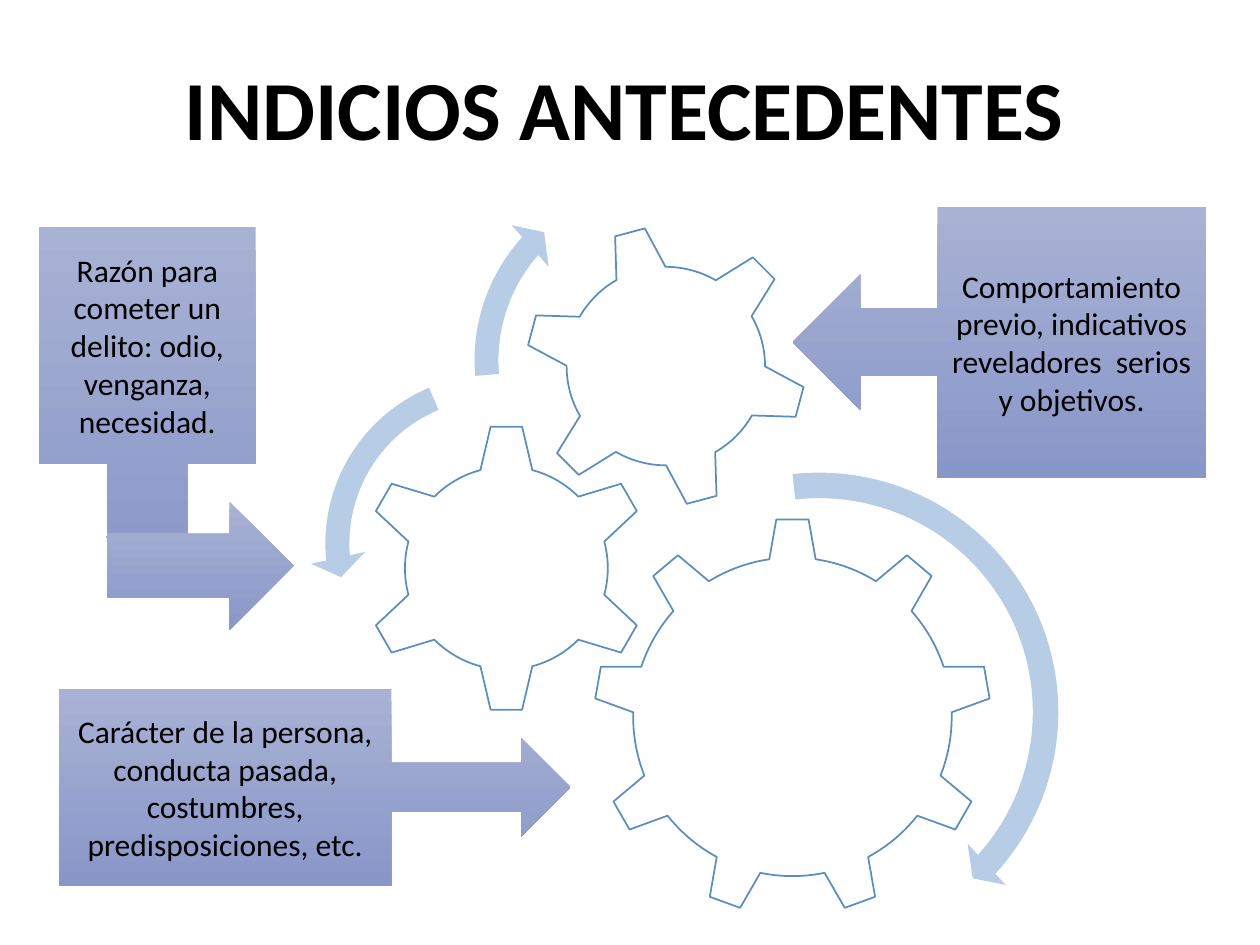
from dataclasses import dataclass

from pptx import Presentation
from pptx.dml.color import RGBColor
from pptx.enum.shapes import MSO_SHAPE
from pptx.enum.text import MSO_ANCHOR, PP_ALIGN
from pptx.util import Pt

GEAR_6, GEAR_9 = MSO_SHAPE.GEAR_6, MSO_SHAPE.GEAR_9
TURN_RIGHT, TURN_LEFT = MSO_SHAPE.CIRCULAR_ARROW, MSO_SHAPE.LEFT_CIRCULAR_ARROW
CALL_LEFT, CALL_RIGHT = MSO_SHAPE.LEFT_ARROW_CALLOUT, MSO_SHAPE.RIGHT_ARROW_CALLOUT
CALL_DOWN, ARROW = MSO_SHAPE.DOWN_ARROW_CALLOUT, MSO_SHAPE.RIGHT_ARROW
CENTER, MIDDLE = PP_ALIGN.CENTER, MSO_ANCHOR.MIDDLE


@dataclass(frozen=True)
class Theme:
    font: str = "Calibri"
    title_size: int = 48
    body_size: int = 18
    text: str = "000000"
    gear_fill: str = "FFFFFF"
    gear_line: str = "598EBE"
    turn: str = "B7CCE5"
    grad_top: str = "A8B2D4"
    grad_bottom: str = "8996C8"


THEME = Theme()


def rgb(value):
    return RGBColor.from_string(value)


def add_shape(shapes, kind, box, adj=()):
    sp = shapes.add_shape(kind, *(Pt(v) for v in box))
    sp.shadow.inherit = False
    sp.line.fill.background()
    for i, value in enumerate(adj):
        sp.adjustments[i] = value
    return sp


def set_solid(sp, color):
    sp.fill.solid()
    sp.fill.fore_color.rgb = rgb(color)


def set_text(sp, text, size, bold=False):
    tf = sp.text_frame
    tf.vertical_anchor = MIDDLE
    p = tf.paragraphs[0]
    p.text = text
    p.alignment = CENTER
    p.font.name = THEME.font
    p.font.size = Pt(size)
    p.font.bold = bold
    p.font.color.rgb = rgb(THEME.text)


def add_title(slide, box, text):
    sp = slide.shapes.add_textbox(*(Pt(v) for v in box))
    sp.text_frame.word_wrap = False
    set_text(sp, text, THEME.title_size, bold=True)


def add_gears(slide, left, top):
    """Three gears and their turning arrows, placed from the top left corner."""
    gears = [
        (GEAR_9, 162.1, 203.7, 227.5, 0),
        (GEAR_6, 29.6, 149.7, 165.6, 0),
        (GEAR_6, 122.5, 36, 162, -15),
    ]
    turns = [
        (TURN_RIGHT, 145.6, 169.2, 290.9, (0.05, 2.99, 25.37, 158.18, 0.055)),
        (TURN_LEFT, 0, 113, 211, (0.065, 4.3, 104.89, 148.38, 0.075)),
        (TURN_RIGHT, 85.1, 0, 227.5, (0.06, 3.94, 133.14, 105.08, 0.07)),
    ]
    group = slide.shapes.add_group_shape()
    for kind, x, y, size, angle in gears:
        sp = add_shape(group.shapes, kind, (left + x, top + y, size, size))
        set_solid(sp, THEME.gear_fill)
        sp.line.color.rgb = rgb(THEME.gear_line)
        sp.line.width = Pt(1)
        sp.rotation = angle
    for kind, x, y, size, adj in turns:
        sp = add_shape(group.shapes, kind, (left + x, top + y, size, size), adj)
        set_solid(sp, THEME.turn)


def add_callout(slide, kind, box, text="", adj=()):
    sp = add_shape(slide.shapes, kind, box, adj)
    sp.fill.gradient()
    sp.fill.gradient_angle = 270
    for stop, color, position in zip(sp.fill.gradient_stops,
                                     (THEME.grad_top, THEME.grad_bottom), (0, 1)):
        stop.color.rgb = rgb(color)
        stop.position = position
    if text:
        set_text(sp, text, THEME.body_size)


def main():
    prs = Presentation()
    prs.slide_width, prs.slide_height = Pt(720), Pt(540)
    slide = prs.slides.add_slide(prs.slide_layouts[6])

    # Gears in the middle, under the title
    add_gears(slide, 177, 92.2)
    add_title(slide, (95.8, 28.1, 522, 65.5), "INDICIOS ANTECEDENTES")

    # Callouts pointing at the gears
    add_callout(slide, CALL_LEFT, (452.9, 118.1, 236.2, 154.8),
                "Comportamiento previo, indicativos reveladores  serios y objetivos.")
    add_callout(slide, CALL_RIGHT, (33.8, 393.8, 292.3, 112.3),
                "Carácter de la persona, conducta pasada, costumbres, "
                "predisposiciones, etc.")
    add_callout(slide, CALL_DOWN, (22.3, 129.6, 123.8, 208.1),
                "Razón para cometer un delito: odio, venganza, necesidad.",
                (0.37, 0.19, 0.25, 0.65))
    add_callout(slide, ARROW, (61.2, 286.6, 106.6, 73.4))

    prs.save("out.pptx")


if __name__ == "__main__":
    main()
